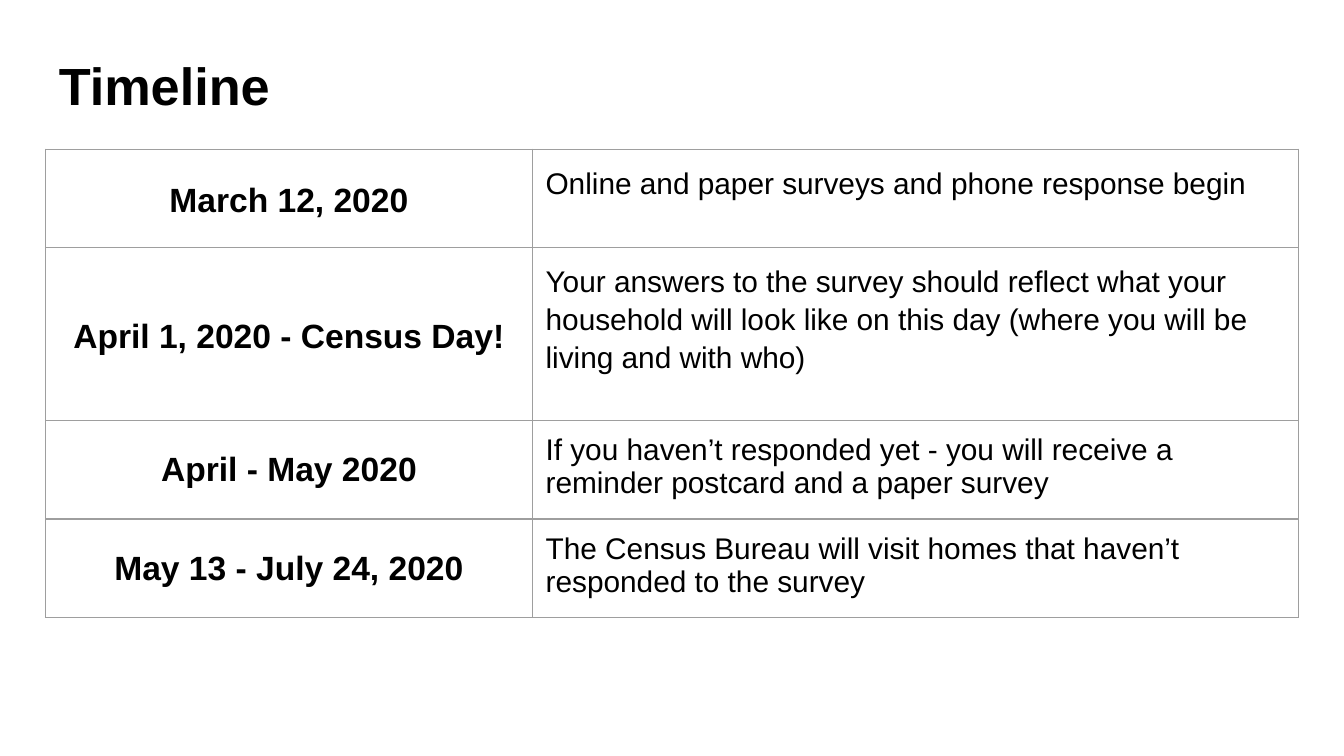
from lxml.etree import SubElement
from pptx import Presentation
from pptx.dml.color import RGBColor
from pptx.enum.text import MSO_ANCHOR, PP_ALIGN
from pptx.oxml.ns import qn
from pptx.util import Pt

INSET = 7.2
BLACK, WHITE, GRAY = "000000", "FFFFFF", "9E9E9E"
COLUMN_WIDTHS = (260.64, 410.4)

# Date, event, row height, whether the text is spaced out
TIMELINE = [
    ("March 12, 2020", "Online and paper surveys and phone response begin", 52.5, True),
    ("April 1, 2020 - Census Day!",
     "Your answers to the survey should reflect what your household will look "
     "like on this day (where you will be living and with who)", 92.8, True),
    ("April - May 2020",
     "If you haven’t responded yet - you will receive a reminder postcard "
     "and a paper survey", 50, False),
    ("May 13 - July 24, 2020",
     "The Census Bureau will visit homes that haven’t responded to the survey", 50, False),
]


def color(hex_value):
    return RGBColor.from_string(hex_value)


def set_insets(holder):
    """Give a cell or text frame equal margins on all sides."""
    holder.margin_left = holder.margin_right = Pt(INSET)
    holder.margin_top = holder.margin_bottom = Pt(INSET)


def add_run(paragraph, text, size, bold):
    run = paragraph.add_run()
    run.text = text
    run.font.name = "Arial"
    run.font.size = Pt(size)
    run.font.bold = bold
    run.font.color.rgb = color(BLACK)


def add_title(slide, left, top, width, height):
    box = slide.shapes.add_textbox(Pt(left), Pt(top), Pt(width), Pt(height))
    frame = box.text_frame
    frame.word_wrap = True
    set_insets(frame)
    add_run(frame.paragraphs[0], "Timeline", 28, True)


def set_borders(cell):
    properties = cell._tc.get_or_add_tcPr()
    for position, tag in enumerate(("a:lnL", "a:lnR", "a:lnT", "a:lnB")):
        line = SubElement(properties, qn(tag), w=str(Pt(0.75)))
        fill = SubElement(line, qn("a:solidFill"))
        SubElement(fill, qn("a:srgbClr"), val=GRAY)
        properties.insert(position, line)


def fill_cell(cell, text, size, bold, spaced):
    set_insets(cell)
    cell.fill.background()
    set_borders(cell)
    paragraph = cell.text_frame.paragraphs[0]
    if spaced:
        paragraph.line_spacing = 1.15
        paragraph.space_before = paragraph.space_after = Pt(12)
    add_run(paragraph, text, size, bold)
    return paragraph


def add_timeline(slide, left, top):
    width = sum(COLUMN_WIDTHS)
    height = sum(row[2] for row in TIMELINE)
    table = slide.shapes.add_table(len(TIMELINE), len(COLUMN_WIDTHS), Pt(left), Pt(top),
                                   Pt(width), Pt(height)).table
    table.first_row = table.horz_banding = False
    for column, column_width in zip(table.columns, COLUMN_WIDTHS):
        column.width = Pt(column_width)
    for index, (date, event, row_height, spaced) in enumerate(TIMELINE):
        table.rows[index].height = Pt(row_height)
        date_cell = table.cell(index, 0)
        date_cell.vertical_anchor = MSO_ANCHOR.MIDDLE
        fill_cell(date_cell, date, 18, True, spaced).alignment = PP_ALIGN.CENTER
        fill_cell(table.cell(index, 1), event, 16, False, spaced)


def main():
    presentation = Presentation()
    presentation.slide_width = Pt(720)
    presentation.slide_height = Pt(405)
    slide = presentation.slides.add_slide(presentation.slide_layouts[6])
    slide.background.fill.solid()
    slide.background.fill.fore_color.rgb = color(WHITE)
    add_title(slide, 24.5, 21.6, 671, 45.4)
    add_timeline(slide, 24.5, 80)
    presentation.save("out.pptx")


if __name__ == "__main__":
    main()
